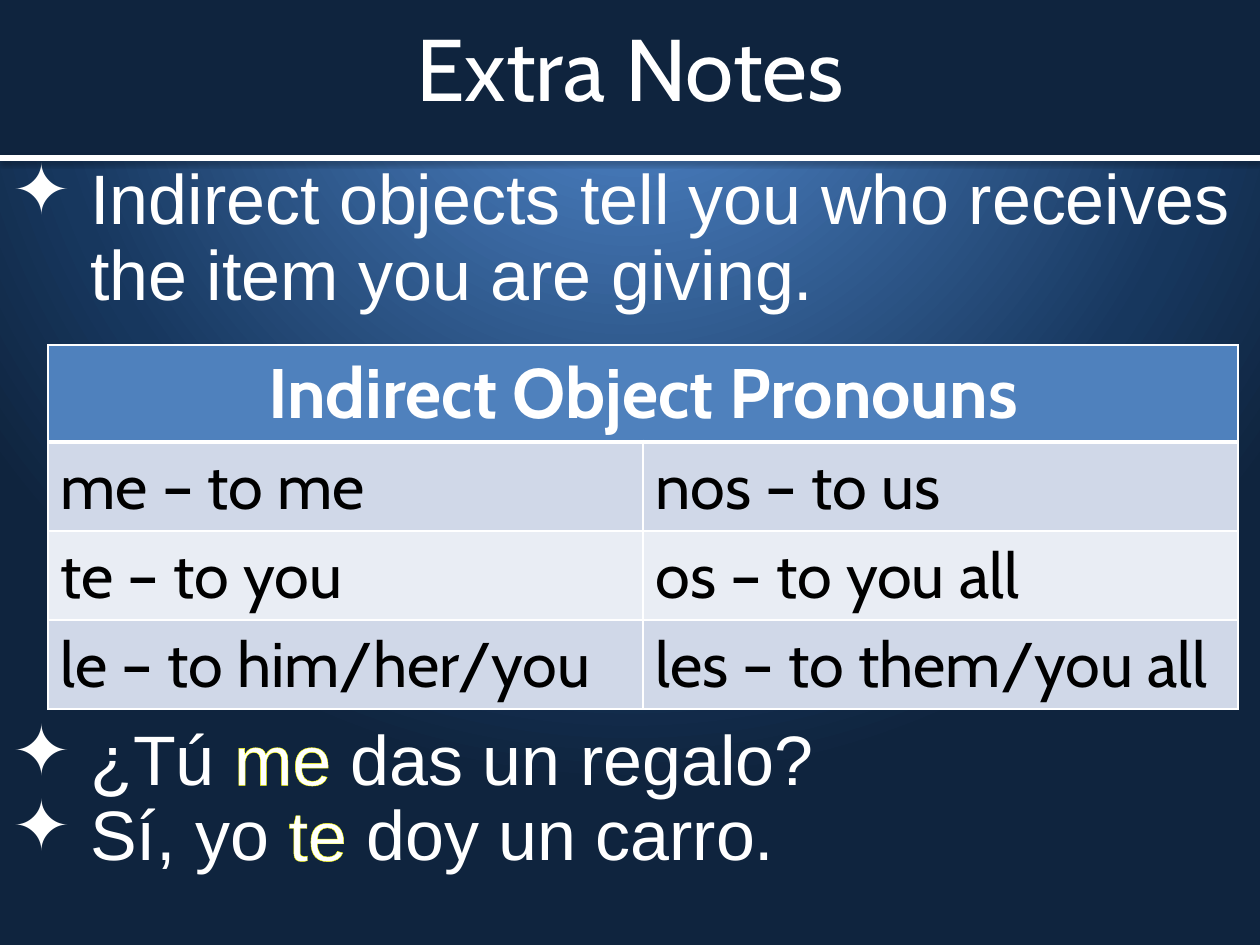
import pptx
import pptx.util
import pptx.dml.color
import pptx.enum.shapes
import pptx.enum.text
import pptx.oxml
import pptx.oxml.ns

Pt = pptx.util.Pt
PP_ALIGN = pptx.enum.text.PP_ALIGN
ANCHOR = pptx.enum.text.MSO_ANCHOR

COLORS = {
    "white": "FFFFFF", "black": "000000", "navy": "0F243E", "outline": "FFFF00",
    "head": "4F81BD", "band": "D0D8E8", "band_light": "E9EDF4",
}
BACKGROUND_STOPS = [(0, "558ED5"), (75, "17375E"), (100, "0F243E")]

TITLE = "Extra Notes"
# Each note is a list of (text, outlined) runs.
NOTES = [
    [("Indirect objects tell you who receives the item you are giving.", False)],
    [("¿Tú ", False), ("me", True), (" das un regalo?", False)],
    [("Sí, yo ", False), ("te ", True), ("doy un carro.", False)],
]
TABLE_HEAD = "Indirect Object Pronouns"
PRONOUNS = [
    ("me – to me", "nos – to us"),
    ("te – to you", "os – to you all"),
    ("le – to him/her/you", "les – to them/you all"),
]

SLIDE_W, SLIDE_H = 1260, 945
HEADER_H, TITLE_H = 158, 134
NOTE_INDENT = 78
TABLE_X, TABLE_Y, COL_W = 48, 345, 595
HEAD_ROW_H, ROW_H = 97, 89
GAP_FOR_TABLE = 234  # points


def px(n):
    return round(n * 914400 / 126)


def rgb(name):
    return pptx.dml.color.RGBColor.from_string(COLORS[name])


def element(tag, attributes="", children=""):
    """Make one DrawingML element."""
    return pptx.oxml.parse_xml(
        f'<a:{tag} {pptx.oxml.ns.nsdecls("a")} {attributes}>{children}</a:{tag}>')


def line_element(tag, color, points):
    return element(tag, f'w="{Pt(points)}"',
                   f'<a:solidFill><a:srgbClr val="{COLORS[color]}"/></a:solidFill>')


def style_run(r, size, font, color="white", bold=False):
    r.font.size = Pt(size)
    r.font.name = font
    r.font.bold = bold
    r.font.color.rgb = rgb(color)


def set_background(slide):
    slide.background.fill.gradient()
    old = slide.background._cSld.find(".//" + pptx.oxml.ns.qn("a:gradFill"))
    stops = "".join(f'<a:gs pos="{pos * 1000}"><a:srgbClr val="{color}"/></a:gs>'
                    for pos, color in BACKGROUND_STOPS)
    old.getparent().replace(old, element(
        "gradFill", 'rotWithShape="1"',
        f'<a:gsLst>{stops}</a:gsLst><a:path path="circle">'
        '<a:fillToRect l="50000" t="-80000" r="50000" b="180000"/></a:path>'))


def add_header_band(slide):
    sp = slide.shapes.add_shape(pptx.enum.shapes.MSO_SHAPE.RECTANGLE,
                                0, 0, px(SLIDE_W), px(HEADER_H))
    sp.shadow.inherit = False
    sp.fill.solid()
    sp.fill.fore_color.rgb = rgb("navy")
    sp.line.fill.background()


def add_header_rule(slide):
    rule = slide.shapes.add_connector(pptx.enum.shapes.MSO_CONNECTOR.STRAIGHT,
                                      0, px(HEADER_H), px(SLIDE_W), px(HEADER_H))
    rule.line.color.rgb = rgb("white")
    rule.line.width = Pt(3)
    rule._element.spPr.append(element(
        "effectLst", children=
        '<a:outerShdw blurRad="39400" dist="20300" dir="5400000" rotWithShape="0">'
        f'<a:srgbClr val="{COLORS["black"]}"><a:alpha val="38000"/></a:srgbClr>'
        '</a:outerShdw>'))


def add_text_frame(slide, top, height):
    tf = slide.shapes.add_textbox(0, px(top), px(SLIDE_W), px(height)).text_frame
    tf.word_wrap = True
    return tf


def add_title(slide):
    tf = add_text_frame(slide, 0, TITLE_H)
    tf.vertical_anchor = ANCHOR.MIDDLE
    p = tf.paragraphs[0]
    p.text = TITLE
    p.alignment = PP_ALIGN.CENTER
    style_run(p.runs[0], 50, "Cabin")


def add_notes(slide):
    tf = add_text_frame(slide, HEADER_H, SLIDE_H - HEADER_H)
    for i, note in enumerate(NOTES):
        p = tf.paragraphs[0] if i == 0 else tf.add_paragraph()
        p.line_spacing = 0.9
        p.space_after = Pt(GAP_FOR_TABLE if i == 0 else 0)
        pPr = p._p.get_or_add_pPr()
        pPr.set("marL", str(px(NOTE_INDENT)))
        pPr.set("indent", str(-px(NOTE_INDENT)))
        pPr.append(element("buChar", 'char="✦"'))
        for text, outlined in note:
            r = p.add_run()
            r.text = text
            style_run(r, 40, "Arial")
            if outlined:
                r._r.get_or_add_rPr().insert(0, line_element("ln", "outline", 0.75))


def style_cell(cell, fill, top=1, bottom=1):
    cell.fill.solid()
    cell.fill.fore_color.rgb = rgb(fill)
    cell.vertical_anchor = ANCHOR.TOP
    sides = [("lnL", 1), ("lnR", 1), ("lnT", top), ("lnB", bottom)]
    for i, (side, points) in enumerate(sides):
        cell._tc.get_or_add_tcPr().insert(i, line_element(side, "white", points))


def fill_cell(cell, text, size, color, bold=False):
    cell.text_frame.text = text
    style_run(cell.text_frame.paragraphs[0].runs[0], size, "Cabin", color, bold)


def add_pronoun_table(slide):
    rows, cols = len(PRONOUNS) + 1, len(PRONOUNS[0])
    table = slide.shapes.add_table(
        rows, cols, px(TABLE_X), px(TABLE_Y), px(cols * COL_W),
        px(HEAD_ROW_H + len(PRONOUNS) * ROW_H)).table
    for col in table.columns:
        col.width = px(COL_W)
    for i, row in enumerate(table.rows):
        row.height = px(ROW_H if i else HEAD_ROW_H)

    head = table.cell(0, 0)
    head.merge(table.cell(0, cols - 1))
    fill_cell(head, TABLE_HEAD, 40, "white", bold=True)
    head.text_frame.paragraphs[0].alignment = PP_ALIGN.CENTER
    for c in range(cols):
        style_cell(table.cell(0, c), "head", bottom=3)

    for i, pair in enumerate(PRONOUNS, start=1):
        for c, text in enumerate(pair):
            cell = table.cell(i, c)
            fill_cell(cell, text, 36, "black")
            style_cell(cell, "band" if i % 2 else "band_light", top=3 if i == 1 else 1)


def main():
    prs = pptx.Presentation()
    prs.slide_width, prs.slide_height = px(SLIDE_W), px(SLIDE_H)
    slide = prs.slides.add_slide(prs.slide_layouts[6])
    set_background(slide)
    add_header_band(slide)
    add_notes(slide)
    add_header_rule(slide)
    add_title(slide)
    add_pronoun_table(slide)
    prs.save("out.pptx")


if __name__ == "__main__":
    main()
